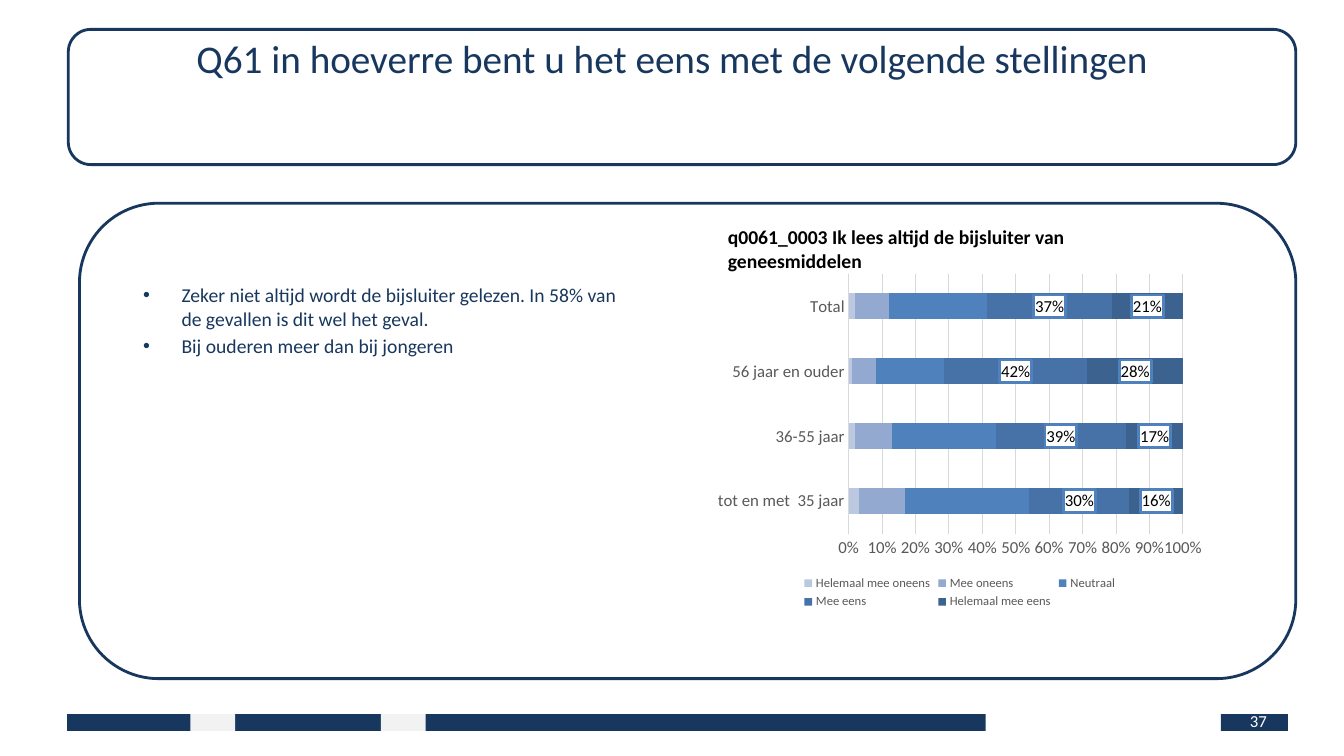
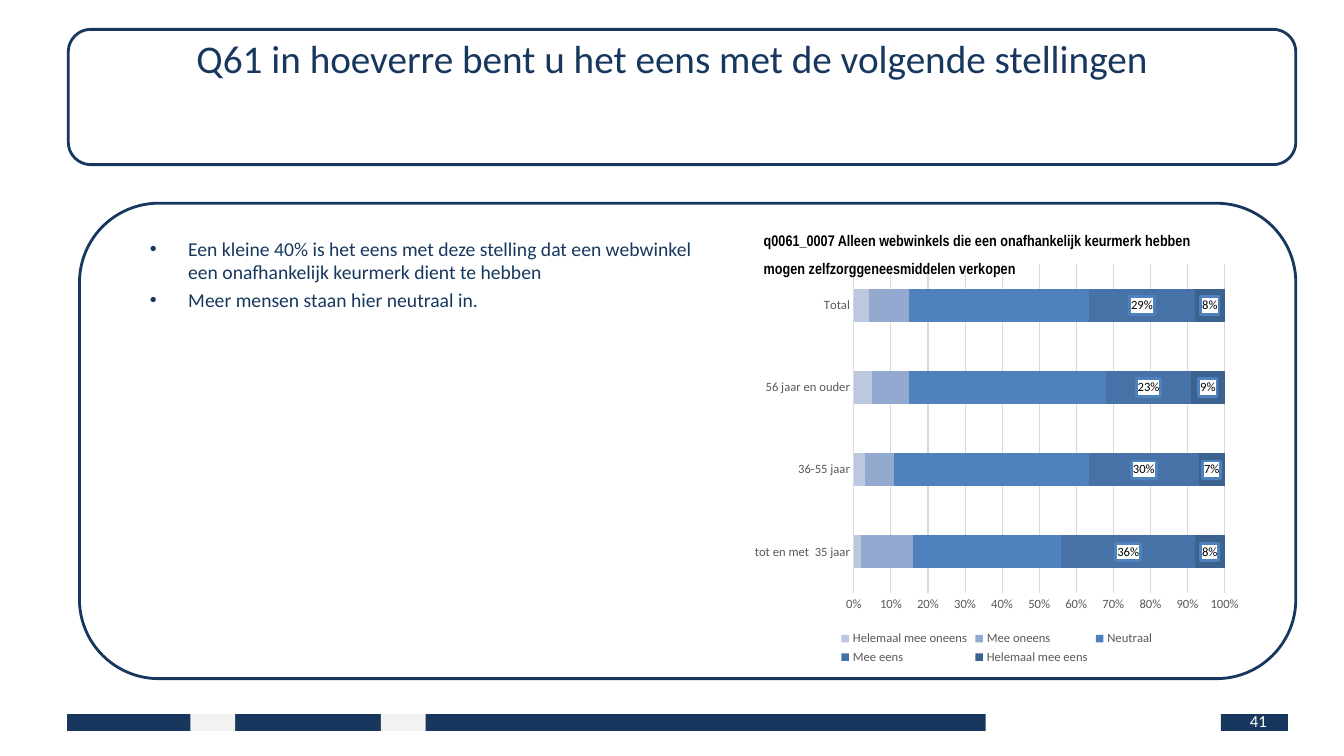
import lxml.etree
import pptx
import pptx.chart.data
import pptx.dml.color
import pptx.enum.chart
import pptx.enum.shapes
import pptx.enum.text
import pptx.oxml
import pptx.oxml.ns
import pptx.util

COLORS = {
    "navy": "17375E",
    "pale": "F2F2F2",
    "white": "FFFFFF",
    "black": "000000",
    "gray": "595959",
    "grid": "D9D9D9",
    "label": "4F81BD",
}
ANSWERS = {
    "Helemaal mee oneens": "BCC8DF",
    "Mee oneens": "93A9CF",
    "Neutraal": "4F81BD",
    "Mee eens": "4672A8",
    "Helemaal mee eens": "3C628F",
}
LABELLED = ("Mee eens", "Helemaal mee eens")
AGES = ["tot en met  35 jaar", "36-55 jaar", "56 jaar en ouder", "Total"]
TITLE = "Q61 in hoeverre bent u het eens met de volgende stellingen"
COLS, ROWS = 120, 90

SLIDES = [
    {
        "number": "37",
        "bullets": [
            "Zeker niet altijd wordt de bijsluiter gelezen. In 58% van de gevallen is dit wel het geval.",
            "Bij ouderen meer dan bij jongeren",
        ],
        "bullets_at": (11.9, 33.1, 44.9, 38.5),
        "caption": "q0061_0003 Ik lees altijd de bijsluiter van geneesmiddelen",
        "caption_at": (64.1, 26.2, 41, 6.8),
        "caption_format": {"size": 14},
        "caption_tail": 14,
        "chart_at": (63.2, 31.8, 45, 41.2),
        "axis_size": 12,
        "values": [
            (0.03, 0.02, 0.01, 0.02),
            (0.14, 0.11, 0.07, 0.1),
            (0.37, 0.31, 0.2, 0.29),
            (0.3, 0.39, 0.42, 0.37),
            (0.16, 0.17, 0.28, 0.21),
        ],
    },
    {
        "number": "41",
        "bullets": [
            "Een kleine 40% is het eens met deze stelling dat een webwinkel een onafhankelijk keurmerk dient te hebben",
            "Meer mensen staan hier neutraal in.",
        ],
        "bullets_at": (12.5, 27.6, 50.5, 52),
        "caption": "q0061_0007 Alleen webwinkels die een onafhankelijk keurmerk hebben mogen zelfzorggeneesmiddelen verkopen",
        "caption_at": (67.3, 26.9, 42.1, 7.1),
        "caption_format": {"size": 11, "name": "Arial Narrow"},
        "caption_tail": 18,
        "chart_at": (66.5, 30.5, 45, 49.1),
        "axis_size": 9,
        "values": [
            (0.02, 0.03, 0.05, 0.04),
            (0.14, 0.08, 0.1, 0.11),
            (0.4, 0.53, 0.53, 0.49),
            (0.36, 0.3, 0.23, 0.29),
            (0.08, 0.07, 0.09, 0.08),
        ],
    },
]


def rgb(color):
    return pptx.dml.color.RGBColor.from_string(COLORS.get(color, color))


def set_font(font, size=14, color="navy", bold=False, name="Calibri"):
    font.size = pptx.util.Pt(size)
    font.color.rgb = rgb(color)
    font.bold = bold
    font.name = name


def write(p, text, align=None, **fmt):
    if align is not None:
        p.alignment = align
    r = p.add_run()
    r.text = text
    set_font(r.font, **fmt)


class Deck:
    def __init__(self):
        self.prs = pptx.Presentation()
        self.prs.slide_width = pptx.util.Inches(13.33)
        self.prs.slide_height = pptx.util.Inches(7.5)
        self.s = None

    def at(self, col, row, cols, rows):
        dx = self.prs.slide_width / COLS
        dy = self.prs.slide_height / ROWS
        return [round(v) for v in (col * dx, row * dy, cols * dx, rows * dy)]

    def shape(self, kind, box, fill=None, line=None):
        sp = self.s.shapes.add_shape(kind, *self.at(*box))
        sp.shadow.inherit = False
        if fill:
            sp.fill.solid()
            sp.fill.fore_color.rgb = rgb(fill)
        else:
            sp.fill.background()
        if line:
            sp.line.color.rgb = rgb(line)
            sp.line.width = pptx.util.Pt(2)
        else:
            sp.line.fill.background()

    def text_frame(self, box):
        tf = self.s.shapes.add_textbox(*self.at(*box)).text_frame
        tf.word_wrap = True
        return tf

    def frame(self, title, number):
        self.s = self.prs.slides.add_slide(self.prs.slide_layouts[6])
        kinds = pptx.enum.shapes.MSO_SHAPE
        align = pptx.enum.text.PP_ALIGN
        bands = [(6, 82, "navy"), (109, 6, "navy"), (17, 4, "pale"), (34, 4, "pale")]
        for col, cols, fill in bands:
            self.shape(kinds.RECTANGLE, (col, 85, cols, 2), fill)
        self.shape(kinds.ROUNDED_RECTANGLE, (6.1, 3.5, 109.6, 16.1), "white", "navy")
        self.shape(kinds.ROUNDED_RECTANGLE, (7.1, 24.2, 108.6, 56.6), line="navy")
        tf = self.text_frame((6, 3.5, 108, 15))
        write(tf.paragraphs[0], title, align=align.CENTER, size=28)
        tf = self.text_frame((86, 83.4, 28, 4.8))
        tf.vertical_anchor = pptx.enum.text.MSO_ANCHOR.MIDDLE
        write(tf.paragraphs[0], number, align=align.RIGHT, size=12, color="white")

    def bullets(self, items, box):
        tf = self.text_frame(box)
        for i, item in enumerate(items):
            p = tf.add_paragraph() if i else tf.paragraphs[0]
            pPr = p._p.get_or_add_pPr()
            indent = pptx.util.Inches(0.38)
            pPr.set("marL", str(indent))
            pPr.set("indent", str(-indent))
            qn = pptx.oxml.ns.qn
            lxml.etree.SubElement(pPr, qn("a:buFont"), typeface="Arial")
            lxml.etree.SubElement(pPr, qn("a:buChar"), char="•")
            if i:
                p.space_before = pptx.util.Pt(2.8)
            write(p, item)

    def caption(self, text, box, tail, **fmt):
        p = self.text_frame(box).paragraphs[0]
        write(p, text, color="black", bold=True, **fmt)
        if tail != fmt["size"]:
            write(p, " ", size=tail)

    def chart(self, values, box, axis_size):
        enum = pptx.enum.chart
        data = pptx.chart.data.CategoryChartData(number_format="0%")
        data.categories = AGES
        for name, vals in zip(ANSWERS, values):
            data.add_series(name, vals)
        chart = self.s.shapes.add_chart(
            enum.XL_CHART_TYPE.BAR_STACKED_100, *self.at(*box), data
        ).chart
        chart.has_title = False
        set_font(chart.font, size=10, color="black")
        chart.has_legend = True
        chart.legend.position = enum.XL_LEGEND_POSITION.BOTTOM
        chart.legend.include_in_layout = False
        set_font(chart.legend.font, size=9, color="gray")

        for axis in (chart.category_axis, chart.value_axis):
            axis.major_tick_mark = enum.XL_TICK_MARK.NONE
            axis.minor_tick_mark = enum.XL_TICK_MARK.NONE
            set_font(axis.tick_labels.font, size=axis_size, color="gray")
        chart.value_axis.format.line.fill.background()
        chart.value_axis.major_unit = 0.1
        chart.value_axis.has_major_gridlines = True
        chart.value_axis.tick_labels.number_format = "0%"
        chart.value_axis.tick_labels.number_format_is_linked = False
        gridlines = chart.value_axis.major_gridlines
        for line in (chart.category_axis.format.line, gridlines.format.line):
            line.color.rgb = rgb("grid")
            line.width = pptx.util.Pt(0.75)

        plot = chart.plots[0]
        plot.vary_by_categories = False
        plot.gap_width = 150
        plot.overlap = 100
        for series in plot.series:
            series.format.fill.solid()
            series.format.fill.fore_color.rgb = rgb(ANSWERS[series.name])
            if series.name in LABELLED:
                self.value_labels(series.data_labels, axis_size)

    def value_labels(self, labels, size):
        labels.show_value = True
        labels.number_format = "0%"
        labels.number_format_is_linked = False
        set_font(labels.font, size=size, color="black")
        ns = pptx.oxml.ns
        box = pptx.oxml.parse_xml(
            f'<c:spPr {ns.nsdecls("c", "a")}>'
            f'<a:solidFill><a:srgbClr val="{COLORS["white"]}"/></a:solidFill>'
            f'<a:ln w="{pptx.util.Pt(2)}"><a:solidFill>'
            f'<a:srgbClr val="{COLORS["label"]}"/></a:solidFill></a:ln></c:spPr>'
        )
        labels._element.find(ns.qn("c:numFmt")).addnext(box)


def main():
    deck = Deck()
    for page in SLIDES:
        deck.frame(TITLE, page["number"])
        deck.bullets(page["bullets"], page["bullets_at"])
        deck.chart(page["values"], page["chart_at"], page["axis_size"])
        deck.caption(
            page["caption"], page["caption_at"], page["caption_tail"], **page["caption_format"]
        )
    deck.prs.save("out.pptx")


if __name__ == "__main__":
    main()
